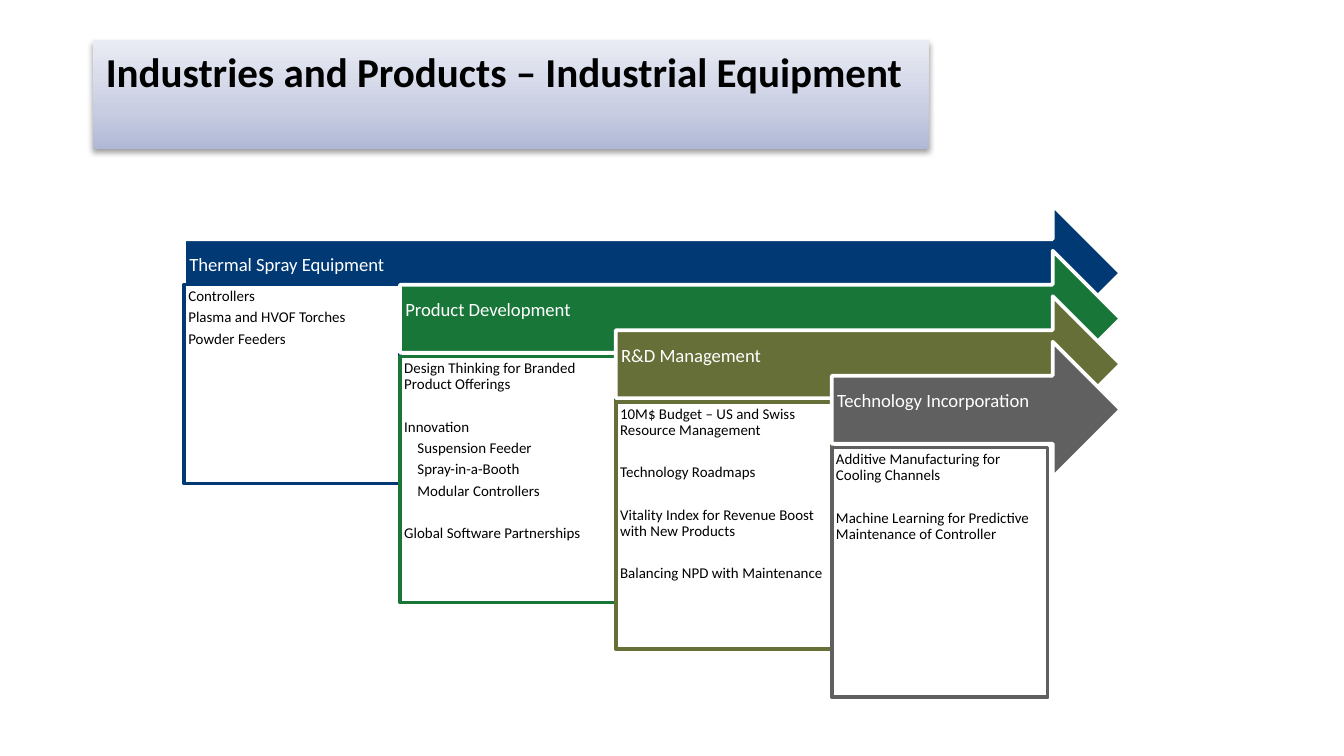
from copy import deepcopy
from lxml.etree import SubElement
from pptx import Presentation
from pptx.dml.color import RGBColor
from pptx.enum.shapes import MSO_SHAPE
from pptx.enum.text import MSO_ANCHOR, PP_ALIGN
from pptx.oxml.ns import qn
from pptx.util import Cm, Pt

NAVY = RGBColor(0x00, 0x39, 0x74)
GREEN = RGBColor(0x18, 0x76, 0x38)
OLIVE = RGBColor(0x66, 0x6F, 0x38)
GRAY = RGBColor(0x60, 0x60, 0x60)
WHITE = RGBColor(0xFF, 0xFF, 0xFF)
BLACK = RGBColor(0x00, 0x00, 0x00)
BLEND = [
    (0, RGBColor(0xB0, 0xB8, 0xD6)),
    (0.35, RGBColor(0xC8, 0xCD, 0xE2)),
    (1, RGBColor(0xEA, 0xEC, 0xF4)),
]

LEFT, RIGHT, TOP = 3.48, 21.18, 3.88
STEP, DROP, TALL = 4.08, 0.86, 2.57

STAGES = [
    ("Thermal Spray Equipment", NAVY, 1.5, 3.76, [
        [("Controllers", 0), ("Plasma and HVOF Torches", 0), ("Powder Feeders", 0)],
    ]),
    ("Product Development", GREEN, 2, 4.65, [
        [("Design Thinking for Branded Product Offerings", 0)],
        [("Innovation", 0), ("Suspension Feeder", 1), ("Spray-in-a-Booth", 1),
         ("Modular Controllers", 1)],
        [("Global Software Partnerships", 0)],
    ]),
    ("R&D Management", OLIVE, 2, 4.67, [
        [("10M$ Budget – US and Swiss Resource Management", 0)],
        [("Technology Roadmaps", 0)],
        [("Vitality Index for Revenue Boost with New Products", 0)],
        [("Balancing NPD with Maintenance", 0)],
    ]),
    ("Technology Incorporation", GRAY, 2, 4.72, [
        [("Additive Manufacturing for Cooling Channels", 0)],
        [("Machine Learning for Predictive Maintenance of Controller", 0)],
    ]),
]


class Deck:
    font = "Calibri"

    def __init__(self, slide):
        self.slide = slide

    def shape(self, kind, box, pads, anchor=MSO_ANCHOR.TOP):
        item = self.slide.shapes.add_shape(kind, *map(Cm, box))
        item.shadow.inherit = False
        frame = item.text_frame
        frame.word_wrap = True
        frame.vertical_anchor = anchor
        (frame.margin_left, frame.margin_top,
         frame.margin_right, frame.margin_bottom) = map(Cm, pads)
        return item

    def paint(self, item, fill, line):
        item.fill.solid()
        item.fill.fore_color.rgb = fill
        item.line.color.rgb = line
        item.line.width = Pt(2)

    def label(self, para, text, size, color, bold=False):
        para.alignment = PP_ALIGN.LEFT
        para.line_spacing = 0.9
        para.space_after = Pt(size * 0.35)
        run = para.add_run()
        run.text = text
        run.font.name = self.font
        run.font.size = Pt(size)
        run.font.bold = bold
        run.font.color.rgb = color

    def title(self, text, box):
        item = self.shape(MSO_SHAPE.RECTANGLE, box, (0.25, 0.13, 0.25, 0.13))
        item.line.fill.background()
        item.fill.gradient()
        item.fill.gradient_angle = 90
        props = item._element.spPr
        stops = props.find(".//" + qn("a:gsLst"))
        stops.append(deepcopy(stops[-1]))
        for stop, (place, color) in zip(item.fill.gradient_stops, BLEND):
            stop.position = place
            stop.color.rgb = color
        shade = SubElement(
            props.find(qn("a:effectLst")), qn("a:outerShdw"),
            blurRad=str(Pt(3.1)), dist=str(Pt(1.6)), dir="5400000", rotWithShape="0")
        tint = SubElement(shade, qn("a:srgbClr"), val=str(BLACK))
        SubElement(tint, qn("a:alpha"), val="38000")
        para = item.text_frame.paragraphs[0]
        self.label(para, text, 22, BLACK, True)
        para.line_spacing = Pt(26)

    def arrow(self, text, color, box):
        item = self.shape(MSO_SHAPE.RIGHT_ARROW, box, (0.1, 0.1, 0.7, 0.4),
                          MSO_ANCHOR.MIDDLE)
        self.paint(item, color, WHITE)
        self.label(item.text_frame.paragraphs[0], text, 10, WHITE)

    def panel(self, groups, color, box):
        item = self.shape(MSO_SHAPE.RECTANGLE, box, (0.08,) * 4)
        self.paint(item, WHITE, color)
        frame = item.text_frame
        for g, group in enumerate(groups):
            for n, (text, level) in enumerate(group):
                first = g == n == 0
                para = frame.paragraphs[0] if first else frame.add_paragraph()
                if level:
                    para._p.get_or_add_pPr().set("marL", str(Cm(0.25)))
                self.label(para, text, 8, BLACK)
                if g and n == 0:
                    para.space_before = Pt(11.3)


def main():
    show = Presentation()
    show.slide_width, show.slide_height = Cm(25.4), Cm(14.29)
    deck = Deck(show.slides.add_slide(show.slide_layouts[6]))
    deck.title("Industries and Products – Industrial Equipment",
               (1.75, 0.76, 15.8, 2.06))
    for i, (name, color, gap, height, groups) in enumerate(STAGES):
        x, y = LEFT + i * STEP, TOP + i * DROP
        deck.arrow(name, color, (x, y, RIGHT - x, TALL))
        deck.panel(groups, color, (x, y + gap, STEP, height))
    show.save("out.pptx")


if __name__ == "__main__":
    main()
